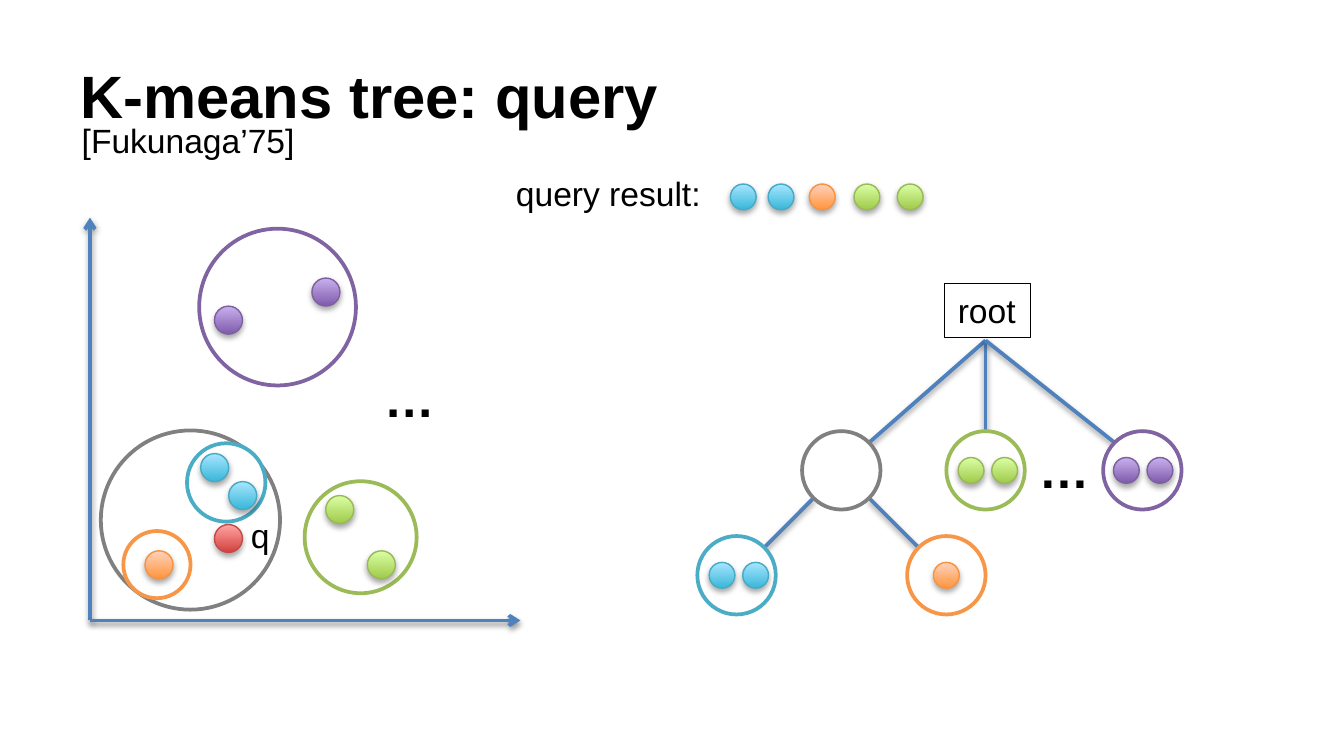
import pptx
import pptx.util
import pptx.dml.color
import pptx.enum.shapes
import pptx.enum.text
import pptx.oxml.ns
import lxml.etree

Pt = pptx.util.Pt
SHAPE = pptx.enum.shapes.MSO_SHAPE
ANCHOR = pptx.enum.text.MSO_ANCHOR
FIT = pptx.enum.text.MSO_AUTO_SIZE

# Per hue: ring line, dot line, dot gradient from bottom to top
COLORS = {
    "black": "000000",
    "white": "FFFFFF",
    "axis": "4F81BD",
    "gray": {"ring": "808080"},
    "green": {"ring": "9BBB59", "edge": "98B955", "low": "A0CA4A", "high": "DAFFA5"},
    "purple": {"ring": "8064A2", "edge": "7D60A0", "low": "7F5BAB", "high": "C8B0ED"},
    "blue": {"ring": "4BACC6", "edge": "46AAC5", "low": "39B7D8", "high": "A7E6FF"},
    "orange": {"ring": "F79646", "edge": "F69240", "low": "FF953E", "high": "FFD2BD"},
    "red": {"edge": "BF4C48", "low": "D1403C", "high": "FFA6A5"},
}
NODE = 42     # diameter of a tree node
SMALL = 13.8  # dots in the tree and the result
BIG = 15      # dots in the plot


def rgb(code):
    return pptx.dml.color.RGBColor.from_string(code)


def add_xml(parent, tag, **attrs):
    return lxml.etree.SubElement(parent, pptx.oxml.ns.qn(tag), **attrs)


def stroke(shape, color, width):
    shape.line.color.rgb = rgb(color)
    shape.line.width = Pt(width)


def shade(shape, drop, alpha):
    """Soft shadow straight below; call after fill and line are set."""
    effects = add_xml(shape._element.spPr, "a:effectLst")
    outer = add_xml(effects, "a:outerShdw", blurRad=str(Pt(3.1)), dist=str(Pt(drop)),
                    dir="5400000", rotWithShape="0")
    tint = add_xml(outer, "a:srgbClr", val=COLORS["black"])
    add_xml(tint, "a:alpha", val=str(alpha * 1000))


def disc(slide, x, y, size):
    """Ellipse given by its centre."""
    return slide.shapes.add_shape(SHAPE.OVAL, Pt(x - size / 2), Pt(y - size / 2),
                                  Pt(size), Pt(size))


def ring(slide, x, y, size, hue):
    shape = disc(slide, x, y, size)
    shape.fill.solid()
    shape.fill.fore_color.rgb = rgb(COLORS["white"])
    stroke(shape, COLORS[hue]["ring"], 2)
    shape.shadow.inherit = False


def dot(slide, x, y, size, hue):
    shape = disc(slide, x, y, size)
    shape.fill.gradient()
    shape.fill.gradient_angle = 90
    for stop, key, place in zip(shape.fill.gradient_stops, ("low", "high"), (0, 1)):
        stop.color.rgb = rgb(COLORS[hue][key])
        stop.position = place
    stroke(shape, COLORS[hue]["edge"], 0.75)
    shade(shape, 1.8, 35)


def line(slide, start, end, arrow=False):
    link = slide.shapes.add_connector(pptx.enum.shapes.MSO_CONNECTOR.STRAIGHT,
                                      *map(Pt, start + end))
    stroke(link, COLORS["axis"], 2)
    if arrow:
        add_xml(link.line._get_or_add_ln(), "a:tailEnd", type="arrow")
    shade(link, 1.6, 38)


def label(slide, text, box, size=18, bold=False, wrap=False, anchor=ANCHOR.TOP, edge=None):
    shape = slide.shapes.add_textbox(*map(Pt, box))
    frame = shape.text_frame
    frame.word_wrap = wrap
    frame.auto_size = FIT.NONE if wrap else FIT.SHAPE_TO_FIT_TEXT
    frame.vertical_anchor = anchor
    run = frame.paragraphs[0].add_run()
    run.text = text
    run.font.name = "Arial"
    run.font.size = Pt(size)
    run.font.bold = bold
    run.font.color.rgb = rgb(COLORS["black"])
    if edge:
        stroke(shape, edge, 0.75)


def rim(node, right, down):
    """Point on a node's outline at 45 degrees; right and down are 1 or -1."""
    reach = NODE / 2 * 0.5 ** 0.5
    return node[0] + right * reach, node[1] + down * reach


def tree(slide):
    root = (528, 182.4)
    gray, green, purple = [(x, 252) for x in (450.7, 528, 612)]
    blue, orange = [(x, 308.2) for x in (394.6, 507)]

    # Branches
    line(slide, root, rim(gray, 1, -1))
    line(slide, root, (green[0], green[1] - NODE / 2))
    line(slide, root, rim(purple, -1, -1))
    line(slide, rim(gray, -1, 1), rim(blue, 1, -1))
    line(slide, rim(gray, 1, 1), rim(orange, -1, -1))

    # Nodes with the points they hold, as offsets from the centre
    nodes = [(gray, "gray", ()), (green, "green", (-7.8, 10.2)),
             (purple, "purple", (-8.6, 9.4)), (blue, "blue", (-7.8, 10.2)),
             (orange, "orange", (0,))]
    for (x, y), hue, shifts in nodes:
        ring(slide, x, y, NODE, hue)
        for shift in shifts:
            dot(slide, x + shift, y, SMALL, hue)

    label(slide, "root", (506, 152, 46, 29), edge=COLORS["black"])
    label(slide, "…", (549.4, 231.1, 41.8, 40.3), size=27, bold=True)


def plot(slide):
    # Axes
    origin = (48.2, 332.4)
    line(slide, origin, (48.2, 116.6), arrow=True)
    line(slide, origin, (278.8, 332.4), arrow=True)

    # Clusters
    for x, y, size, hue in [(193.2, 287.8, 60, "green"), (102, 278.6, 96, "gray"),
                            (121.2, 258.5, 42, "blue"), (148.7, 164.5, 84, "purple"),
                            (84.1, 302.5, 36, "orange")]:
        ring(slide, x, y, size, hue)

    # Points, with the query in red
    for x, y, hue in [(174.6, 156.5, "purple"), (122.4, 171.5, "purple"),
                      (182, 273, "green"), (204.3, 302.6, "green"),
                      (115, 250.5, "blue"), (130, 265.5, "blue"),
                      (85.2, 302.6, "orange"), (122.4, 288.5, "red")]:
        dot(slide, x, y, BIG, hue)

    label(slide, "q", (127.4, 272.2, 24.5, 29))
    label(slide, "…", (198.7, 193, 41.8, 40.3), size=27, bold=True)


def result(slide):
    label(slide, "query result:", (269.3, 89.3, 114.5, 29))
    for x, hue in [(398.2, "blue"), (418.4, "blue"), (440.5, "orange"),
                   (464.4, "green"), (487.6, "green")]:
        dot(slide, x, 105.5, SMALL, hue)


def main():
    deck = pptx.Presentation()
    deck.slide_width, deck.slide_height = Pt(720), Pt(405)
    slide = deck.slides.add_slide(deck.slide_layouts[6])

    # Heading
    label(slide, "K-means tree: query", (36, 16.6, 648, 67.7), size=32, bold=True,
          wrap=True, anchor=ANCHOR.MIDDLE)
    label(slide, "[Fukunaga’75]", (36.7, 60.5, 129.6, 29))

    tree(slide)
    plot(slide)
    result(slide)
    deck.save("out.pptx")


if __name__ == "__main__":
    main()
